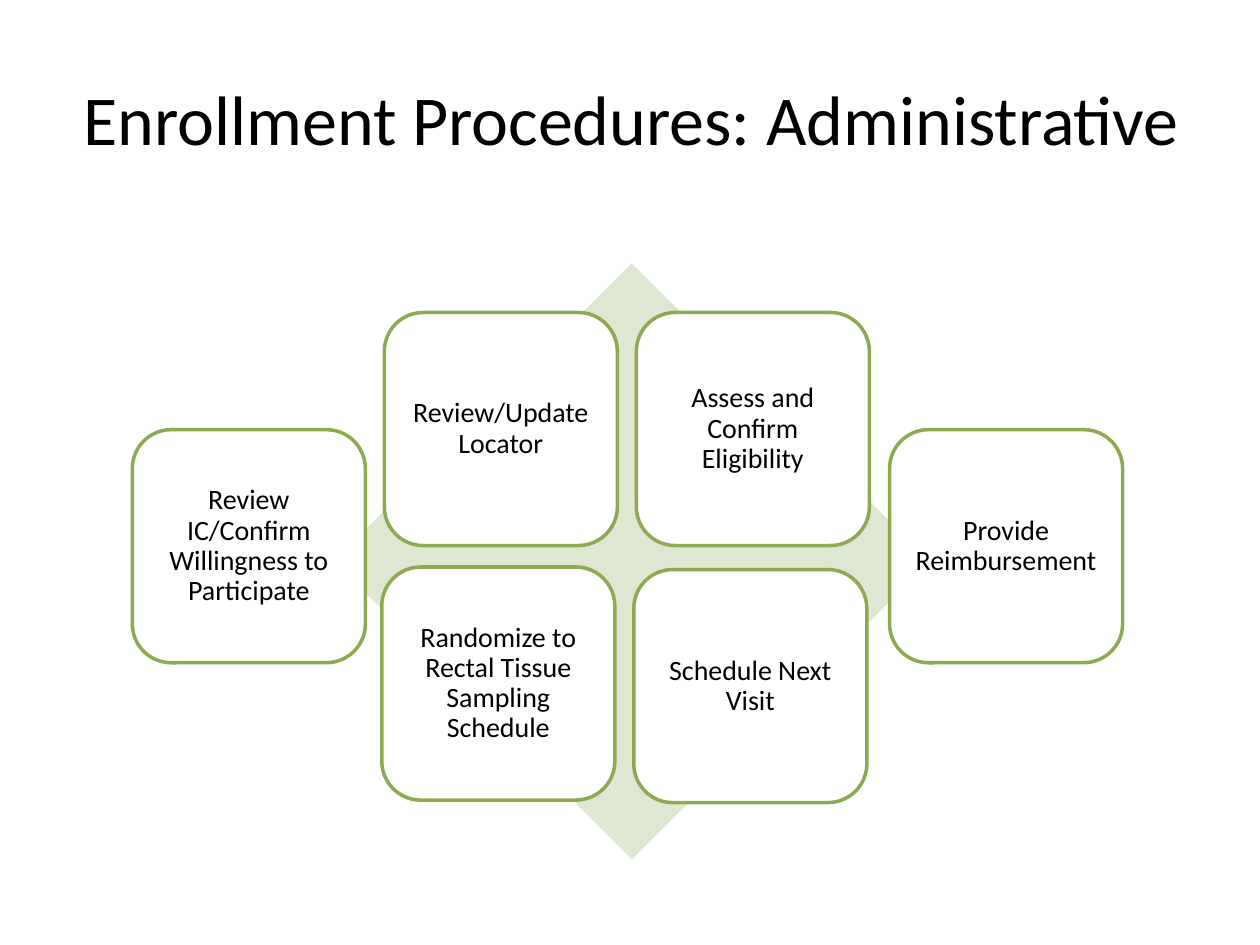
from pptx import Presentation
from pptx.dml.color import RGBColor
from pptx.enum.shapes import MSO_SHAPE as Shape
from pptx.enum.text import MSO_ANCHOR as Anchor, PP_ALIGN as Align
from pptx.util import Inches, Pt

COLORS = {"text": "000000", "card": "FFFFFF", "border": "8DAA51", "diamond": "DEE7D1"}
FONT = "Calibri"

# Card grid, in inches
LEFT, COLUMN_STEP, CARD = 1.05, 2.0, 1.85
UPPER, MIDDLE, LOWER = 2.48, 3.41, 4.5
NUDGE = 0.02  # the lower cards sit slightly off the grid


def color(name):
    return RGBColor.from_string(COLORS[name])


def write(shape, text, size):
    frame = shape.text_frame
    frame.text = text
    frame.word_wrap = True
    frame.vertical_anchor = Anchor.MIDDLE
    para = frame.paragraphs[0]
    para.alignment = Align.CENTER
    para.font.name = FONT
    para.font.size = Pt(size)
    para.font.color.rgb = color("text")
    return frame


deck = Presentation()
deck.slide_width, deck.slide_height = Inches(10), Inches(7.5)
page = deck.slides.add_slide(deck.slide_layouts[5])

# Title
title = page.shapes.title
title.left, title.top = Inches(0.51), Inches(0.31)
title.width, title.height = Inches(9), Inches(1.25)
write(title, "Enrollment Procedures: Administrative", 40)

# Diamond behind the cards
diamond = page.shapes.add_shape(
    Shape.DIAMOND, Inches(2.65), Inches(2.09), Inches(4.73), Inches(4.73))
diamond.shadow.inherit = False
diamond.fill.solid()
diamond.fill.fore_color.rgb = color("diamond")
diamond.line.fill.background()

# Procedure cards: text, column, top, horizontal shift
cards = [
    ("Review IC/Confirm Willingness to Participate", 0, MIDDLE, 0),
    ("Review/Update Locator", 1, UPPER, 0),
    ("Assess and Confirm Eligibility", 2, UPPER, 0),
    ("Randomize to Rectal Tissue Sampling Schedule", 1, LOWER, -NUDGE),
    ("Provide Reimbursement", 3, MIDDLE, 0.01),
    ("Schedule Next Visit", 2, LOWER + NUDGE, -NUDGE),
]
for text, column, top, shift in cards:
    card = page.shapes.add_shape(
        Shape.ROUNDED_RECTANGLE, Inches(LEFT + column * COLUMN_STEP + shift),
        Inches(top), Inches(CARD), Inches(CARD))
    card.shadow.inherit = False
    card.fill.solid()
    card.fill.fore_color.rgb = color("card")
    card.line.color.rgb = color("border")
    card.line.width = Pt(2)
    frame = write(card, text, 16)
    frame.paragraphs[0].line_spacing = 0.9
    frame.margin_left = frame.margin_right = Inches(0.07)
    frame.margin_top = frame.margin_bottom = Inches(0.07)

deck.save("out.pptx")
